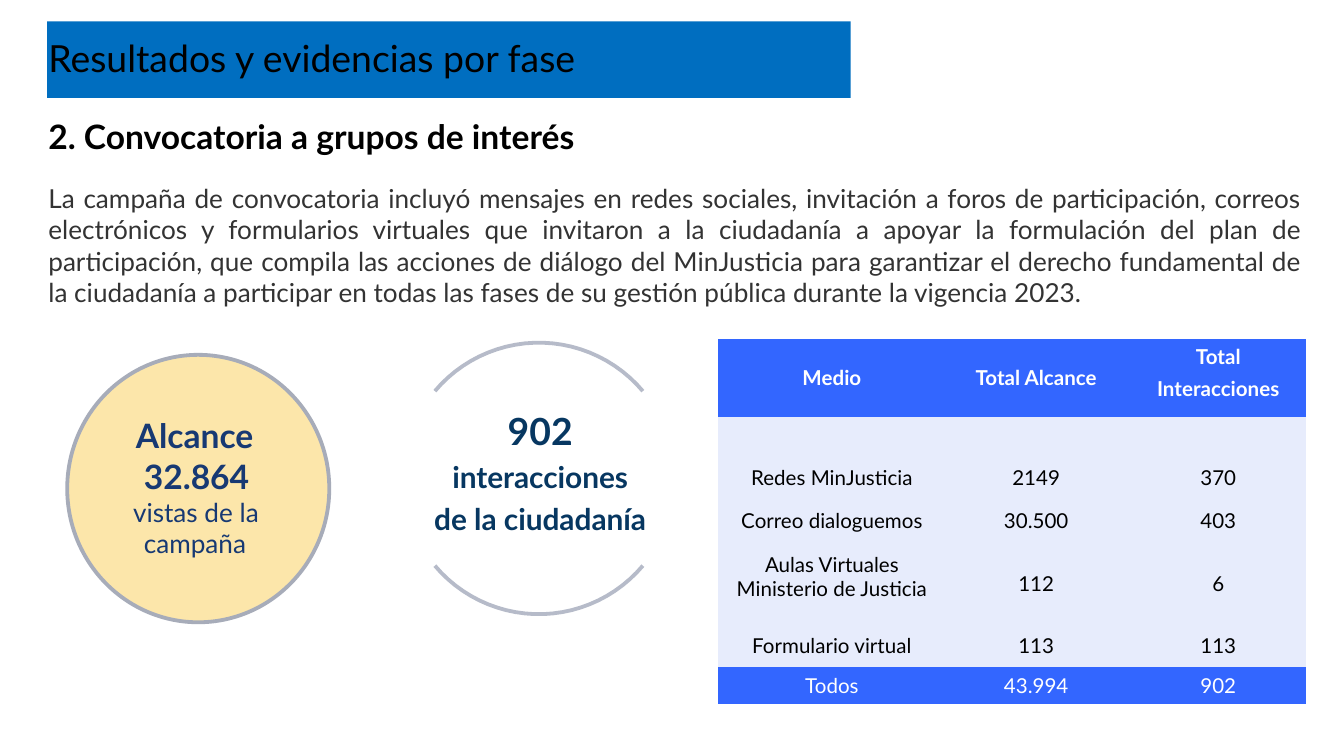
from math import cos, radians, sin

from lxml.etree import SubElement
from pptx import Presentation
from pptx.dml.color import RGBColor
from pptx.enum.shapes import MSO_SHAPE
from pptx.enum.text import MSO_ANCHOR, MSO_AUTO_SIZE, PP_ALIGN
from pptx.oxml.ns import qn
from pptx.util import Inches, Pt

FONT = "Lato"
PLAIN = "{2D5ABB26-0587-4C30-8999-92F81FD0307C}"
HUES = {
    "bar": "006EC0", "black": "000000", "white": "FFFFFF", "gray": "333333",
    "cream": "FCE6AA", "ring": "A7ACB9", "arc": "B6BBC9",
    "navy": "073761", "ink": "173973", "head": "3366FF", "pale": "E7ECFC",
}
COPY = (
    "La campaña de convocatoria incluyó mensajes en redes sociales, invitación a "
    "foros de participación, correos electrónicos y formularios virtuales que "
    "invitaron a la ciudadanía a apoyar la formulación del plan de participación, "
    "que compila las acciones de diálogo del MinJusticia para garantizar el derecho "
    "fundamental de la ciudadanía a participar en todas las fases de su gestión "
    "pública durante la vigencia 2023."
)
ROWS = [
    ("Medio", "Total Alcance", "Total\nInteracciones"),
    ("", "", ""),
    ("Redes MinJusticia", "2149", "370"),
    ("Correo dialoguemos", "30.500", "403"),
    ("Aulas Virtuales Ministerio de Justicia", "112", "6"),
    ("Formulario virtual", "113", "113"),
    ("Todos", "43.994", "902"),
]
WIDE = [1.7, 1.34, 1.34]
HIGH = [0.58, 0.3, 0.3, 0.33, 0.61, 0.32, 0.27]


def hue(name):
    """Return a named colour."""
    return RGBColor.from_string(HUES[name])


def style(par, size, tint, bold=False, align=PP_ALIGN.LEFT, gap=0):
    """Format a paragraph and its runs."""
    par.alignment = align
    par.space_before = Pt(gap)
    for run in par.runs:
        font = run.font
        font.name, font.size, font.bold = FONT, Pt(size), bold
        font.color.rgb = hue(tint)


def indent(par, left, first=0):
    """Set the left margin and first-line indent of a paragraph."""
    props = par._p.get_or_add_pPr()
    props.set("marL", str(Inches(left)))
    props.set("indent", str(Inches(first)))


def place(shape, left, top, width, height, inset=0.01):
    """Position a text shape and return its frame."""
    shape.left, shape.top = Inches(left), Inches(top)
    shape.width, shape.height = Inches(width), Inches(height)
    frame = shape.text_frame
    frame.word_wrap, frame.auto_size = True, MSO_AUTO_SIZE.NONE
    frame.margin_left = frame.margin_right = frame.margin_bottom = 0
    frame.margin_top = Inches(inset)
    return frame


def add_box(slide, left, top, width, height, inset=0.01):
    """Add a text box and return its frame."""
    box = slide.shapes.add_textbox(0, 0, Inches(width), Inches(height))
    return place(box, left, top, width, height, inset)


def paint(shape, fill=None, line=None):
    """Set the fill and outline of a shape."""
    shape.shadow.inherit = False
    if fill:
        shape.fill.solid()
        shape.fill.fore_color.rgb = hue(fill)
    else:
        shape.fill.background()
    if line:
        shape.line.color.rgb = hue(line)
        shape.line.width = Pt(2.04)
    else:
        shape.line.fill.background()


def add_form(slide, kind, left, top, width, height, fill, line=None):
    """Add a painted preset shape."""
    shape = slide.shapes.add_shape(
        kind, Inches(left), Inches(top), Inches(width), Inches(height))
    paint(shape, fill, line)
    return shape


def add_arcs(slide, mid_x, mid_y, size):
    """Draw the top and bottom arcs of a ring as one outline."""
    def sweep(start):
        return [(Inches(mid_x + size * cos(radians(turn))),
                 Inches(mid_y + size * sin(radians(turn))))
                for turn in range(start, start + 101, 4)]

    top, base = sweep(220), sweep(40)
    form = slide.shapes.build_freeform(*top[0])
    form.add_line_segments(top[1:], close=False)
    form.move_to(*base[0])
    form.add_line_segments(base[1:], close=False)
    paint(form.convert_to_shape(), line="arc")


def add_head(slide):
    """Fill the title and its bar."""
    bar = add_form(slide, MSO_SHAPE.RECTANGLE, 0.35, 0.16, 5.98, 0.57, "bar")
    slide.shapes._spTree.insert(2, bar._element)
    frame = place(slide.shapes.title, 0.35, 0.25, 5.98, 0.35)
    frame.vertical_anchor = MSO_ANCHOR.MIDDLE
    frame.text = "Resultados y evidencias por fase"
    indent(frame.paragraphs[0], 0.01)
    style(frame.paragraphs[0], 20, "black")


def add_body(slide):
    """Fill the body with its heading and text."""
    frame = place(slide.placeholders[1], 0.35, 0.85, 9.34, 1.46)
    frame.text = "2. Convocatoria a grupos de interés\n" + COPY
    head, text = frame.paragraphs
    for par in (head, text):
        indent(par, 0.01)
        SubElement(par._p.get_or_add_pPr(), qn("a:buNone"))
    style(head, 18, "black", True)
    style(text, 14, "gray", align=PP_ALIGN.JUSTIFY, gap=14.1)


def add_facts(slide):
    """Add the two round figures."""
    add_arcs(slide, 4.01, 3.56, 1.01)
    add_form(slide, MSO_SHAPE.OVAL, 0.5, 2.64, 1.95, 1.99, "cream", "ring")

    frame = add_box(slide, 3.17, 2.97, 1.7, 1.35, 0.07)
    frame.text = "902\ninteracciones\vde la ciudadanía"
    for par, size in zip(frame.paragraphs, (20, 16)):
        style(par, size, "navy", True, PP_ALIGN.CENTER)
    frame.paragraphs[1].line_spacing = 1.16

    frame = add_box(slide, 0.98, 3.08, 1.18, 1.09)
    frame.text = "Alcance 32.864\nvistas de la\ncampaña"
    forms = [(18, True, 0.09, -0.06), (14, False, 0.01, 0), (14, False, 0.09, 0)]
    for par, (size, bold, left, first) in zip(frame.paragraphs, forms):
        indent(par, left, first)
        style(par, size, "ink", bold)


def add_grid(slide):
    """Add the table of media."""
    grid = slide.shapes.add_table(
        len(ROWS), len(WIDE), Inches(5.34), Inches(2.52),
        Inches(sum(WIDE)), Inches(sum(HIGH))).table
    grid._tbl.tblPr.find(qn("a:tableStyleId")).text = PLAIN
    grid.first_row = grid.horz_banding = False
    for col, width in zip(grid.columns, WIDE):
        col.width = Inches(width)
    for row, height in zip(grid.rows, HIGH):
        row.height = Inches(height)
    for i, row in enumerate(ROWS):
        edge = i in (0, len(ROWS) - 1)
        for j, text in enumerate(row):
            cell = grid.cell(i, j)
            cell.fill.solid()
            cell.fill.fore_color.rgb = hue("head" if edge else "pale")
            cell.margin_left = Inches(0.08 if j == 2 else 0.05)
            cell.margin_right = Inches(0.05)
            cell.margin_top = cell.margin_bottom = 0
            cell.vertical_anchor = MSO_ANCHOR.MIDDLE
            cell.text_frame.text = text
            for k, par in enumerate(cell.text_frame.paragraphs):
                style(par, 11, "white" if edge else "black", i == 0,
                      PP_ALIGN.CENTER, 4 * k)
    for i, j, inset in ((0, 2, 0.04), (4, 0, 0.07)):
        grid.cell(i, j).vertical_anchor = MSO_ANCHOR.TOP
        grid.cell(i, j).margin_top = Inches(inset)


def main():
    """Build the slide and save it."""
    deck = Presentation()
    deck.slide_width = Inches(10)
    deck.slide_height = deck.slide_width * 9 // 16
    slide = deck.slides.add_slide(deck.slide_layouts[1])
    add_head(slide)
    add_body(slide)
    add_facts(slide)
    add_grid(slide)
    deck.save("out.pptx")


if __name__ == "__main__":
    main()
